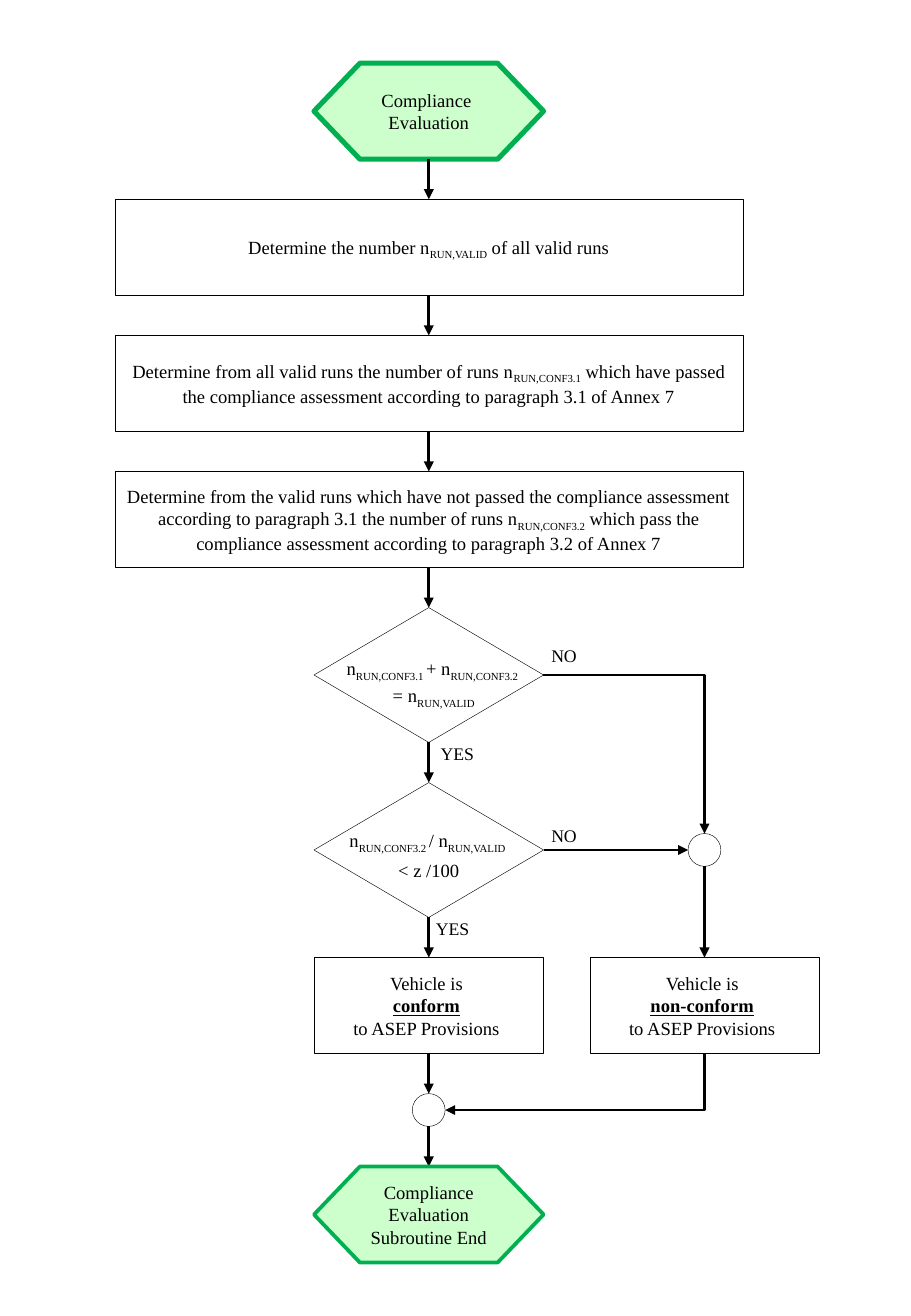
"""Build the flowchart slide for the compliance evaluation subroutine."""
from dataclasses import dataclass
from enum import Enum

from lxml import etree
from pptx import Presentation
from pptx.dml.color import RGBColor
from pptx.enum.shapes import MSO_CONNECTOR, MSO_SHAPE
from pptx.enum.text import MSO_ANCHOR, MSO_AUTO_SIZE, PP_ALIGN
from pptx.oxml.ns import qn
from pptx.util import Inches, Pt

PREPARATION = MSO_SHAPE.FLOWCHART_PREPARATION
PROCESS = MSO_SHAPE.FLOWCHART_PROCESS
DECISION = MSO_SHAPE.FLOWCHART_DECISION
JUNCTION = MSO_SHAPE.OVAL
STRAIGHT = MSO_CONNECTOR.STRAIGHT
ELBOW = MSO_CONNECTOR.ELBOW
MIDDLE = MSO_ANCHOR.MIDDLE
CENTER = PP_ALIGN.CENTER
FIT_TEXT = MSO_AUTO_SIZE.SHAPE_TO_FIT_TEXT

BLACK = RGBColor(0x00, 0x00, 0x00)
WHITE = RGBColor(0xFF, 0xFF, 0xFF)
MINT = RGBColor(0xCC, 0xFF, 0xCC)
GREEN = RGBColor(0x00, 0xB0, 0x50)
FONT = "Times New Roman"

MAIN_X, SIDE_X = 3.53, 5.8
FIRST_TOP, GAP = 0.52, 0.33
NARROW, WIDE = 1.89, 5.17
BOX_HEIGHT, DECISION_HEIGHT, JUNCTION_SIZE = 0.79, 1.11, 0.27


class Style(Enum):
    PLAIN = 0
    SUB = 1
    STRONG = 2


PLAIN, SUB, STRONG = Style.PLAIN, Style.SUB, Style.STRONG
Piece = tuple[str, Style]
Lines = tuple[tuple[Piece, ...], ...]
Point = tuple[float, float]


@dataclass(frozen=True)
class Step:
    kind: MSO_SHAPE
    lines: Lines = ()
    width: float = NARROW
    height: float = BOX_HEIGHT
    fill: RGBColor | None = WHITE
    line: RGBColor = BLACK
    weight: float = 0.25
    insets: tuple[float, float, float, float] = (0.1, 0.05, 0.1, 0.05)
    wrap: bool = True
    spacing: float | None = None


@dataclass(frozen=True)
class Answer:
    text: str
    left: float
    top: float
    width: float


def terminal(lines: Lines, weight: float, wrap: bool) -> Step:
    return Step(PREPARATION, lines, fill=MINT, line=GREEN, weight=weight,
                insets=(0, 0.05, 0, 0.05), wrap=wrap)


def decision(lines: Lines, left_inset: float, bottom_inset: float) -> Step:
    return Step(DECISION, lines, height=DECISION_HEIGHT, fill=None, wrap=False,
                insets=(left_inset, 0.12, 0, bottom_inset), spacing=16)


def verdict(result: str) -> Step:
    return Step(PROCESS, ((("Vehicle is ", PLAIN),),
                          ((result, STRONG), (" ", PLAIN)),
                          (("to ASEP Provisions ", PLAIN),)))


MERGE = Step(JUNCTION, width=JUNCTION_SIZE, height=JUNCTION_SIZE)
CONFORM, NON_CONFORM = verdict("conform"), verdict("non-conform")
ALL_PASSED = decision(((("n", PLAIN), ("RUN,CONF3.1 ", SUB), ("+ n", PLAIN), ("RUN,CONF3.2 ", SUB)),
                       (("= n", PLAIN), ("RUN,VALID", SUB))), 0.08, 0)
SHARE_BELOW = decision(((("n", PLAIN), ("RUN,CONF3.2 ", SUB), ("/ n", PLAIN), ("RUN,VALID ", SUB)),
                        (("< z /100", PLAIN),)), 0, 0.05)

MAIN_STEPS = (
    terminal(((("Compliance ", PLAIN),), (("Evaluation", PLAIN),)), 3, False),
    Step(PROCESS, ((("Determine the number n", PLAIN), ("RUN,VALID", SUB),
                    (" of all valid runs", PLAIN)),), WIDE, spacing=16),
    Step(PROCESS, ((("Determine from all valid runs the number of runs n", PLAIN),
                    ("RUN,CONF3.1", SUB),
                    (" which have passed the compliance assessment according to "
                     "paragraph 3.1 of Annex 7", PLAIN)),), WIDE),
    Step(PROCESS, ((("Determine from the valid runs which have not passed the compliance "
                     "assessment according to paragraph 3.1 the number of runs n", PLAIN),
                    ("RUN,CONF3.2", SUB),
                    (" which pass the compliance assessment according to "
                     "paragraph 3.2 of Annex 7", PLAIN)),), WIDE),
    ALL_PASSED,
    SHARE_BELOW,
    CONFORM,
    MERGE,
    terminal(((("Compliance Evaluation", PLAIN),), (("Subroutine End", PLAIN),)), 2.25, True),
)

ANSWERS = (
    Answer("NO", 4.44, 5.26, 0.42),
    Answer("NO", 4.44, 6.74, 0.42),
    Answer("YES", 3.53, 6.06, 0.48),
    Answer("YES", 3.49, 7.5, 0.48),
)


def style_font(font, size: float) -> None:
    font.name = FONT
    font.size = Pt(size)
    font.color.rgb = BLACK


def draw_step(shapes, step: Step, center_x: float, top: float) -> None:
    shape = shapes.add_shape(step.kind, Inches(center_x - step.width / 2), Inches(top),
                             Inches(step.width), Inches(step.height))
    shape.shadow.inherit = False
    if step.fill is None:
        shape.fill.background()
    else:
        shape.fill.solid()
        shape.fill.fore_color.rgb = step.fill
    shape.line.color.rgb = step.line
    shape.line.width = Pt(step.weight)
    frame = shape.text_frame
    frame.word_wrap = step.wrap
    frame.vertical_anchor = MIDDLE
    (frame.margin_left, frame.margin_top,
     frame.margin_right, frame.margin_bottom) = map(Inches, step.insets)
    for index, pieces in enumerate(step.lines):
        paragraph = frame.add_paragraph() if index else frame.paragraphs[0]
        paragraph.alignment = CENTER
        if step.spacing:
            paragraph.line_spacing = Pt(step.spacing)
        for text, style in pieces:
            run = paragraph.add_run()
            run.text = text
            style_font(run.font, 11)
            if style is SUB:
                run._r.get_or_add_rPr().set("baseline", "-25000")
            elif style is STRONG:
                run.font.bold = run.font.underline = True


def draw_arrow(shapes, start: Point, end: Point, bent: bool = False, down_first: bool = False) -> None:
    arrow = shapes.add_connector(ELBOW if bent else STRAIGHT, *map(Inches, start + end))
    arrow.line.color.rgb = BLACK
    arrow.line.width = Pt(1.5)
    properties = arrow._element.spPr
    etree.SubElement(arrow.line._get_or_add_ln(), qn("a:tailEnd"), type="triangle")
    etree.SubElement(properties, qn("a:effectLst"))
    if bent:
        properties.find(qn("a:prstGeom")).set("prst", "bentConnector2")
    if down_first:
        frame = properties.find(qn("a:xfrm"))
        frame.attrib.pop("flipH", None)
        frame.set("rot", "5400000")
        width, height = abs(end[1] - start[1]), abs(end[0] - start[0])
        arrow.left = Inches((start[0] + end[0] - width) / 2)
        arrow.top = Inches((start[1] + end[1] - height) / 2)
        arrow.width, arrow.height = Inches(width), Inches(height)


def draw_answer(shapes, answer: Answer) -> None:
    box = shapes.add_textbox(*map(Inches, (answer.left, answer.top, answer.width, 0.28)))
    frame = box.text_frame
    frame.text = answer.text
    frame.word_wrap = False
    frame.auto_size = FIT_TEXT
    style_font(frame.paragraphs[0].runs[0].font, 10.5)


def main() -> None:
    deck = Presentation()
    deck.slide_width, deck.slide_height = Inches(7.5), Inches(10.83)
    shapes = deck.slides.add_slide(deck.slide_layouts[6]).shapes

    tops: dict[Step, float] = {}
    top = FIRST_TOP
    for step in MAIN_STEPS:
        if tops:
            draw_arrow(shapes, (MAIN_X, top - GAP), (MAIN_X, top))
        draw_step(shapes, step, MAIN_X, top)
        tops[step] = top
        top += step.height + GAP

    radius = JUNCTION_SIZE / 2
    decision_right = MAIN_X + NARROW / 2
    first_y, second_y = (tops[step] + DECISION_HEIGHT / 2 for step in (ALL_PASSED, SHARE_BELOW))
    verdict_top, merge_y = tops[CONFORM], tops[MERGE] + radius
    draw_step(shapes, MERGE, SIDE_X, second_y - radius)
    draw_step(shapes, NON_CONFORM, SIDE_X, verdict_top)
    draw_arrow(shapes, (decision_right, first_y), (SIDE_X, second_y - radius), bent=True)
    draw_arrow(shapes, (decision_right, second_y), (SIDE_X - radius, second_y))
    draw_arrow(shapes, (SIDE_X, second_y + radius), (SIDE_X, verdict_top))
    draw_arrow(shapes, (SIDE_X, verdict_top + BOX_HEIGHT), (MAIN_X + radius, merge_y),
               bent=True, down_first=True)
    for answer in ANSWERS:
        draw_answer(shapes, answer)
    deck.save("out.pptx")


if __name__ == "__main__":
    main()
